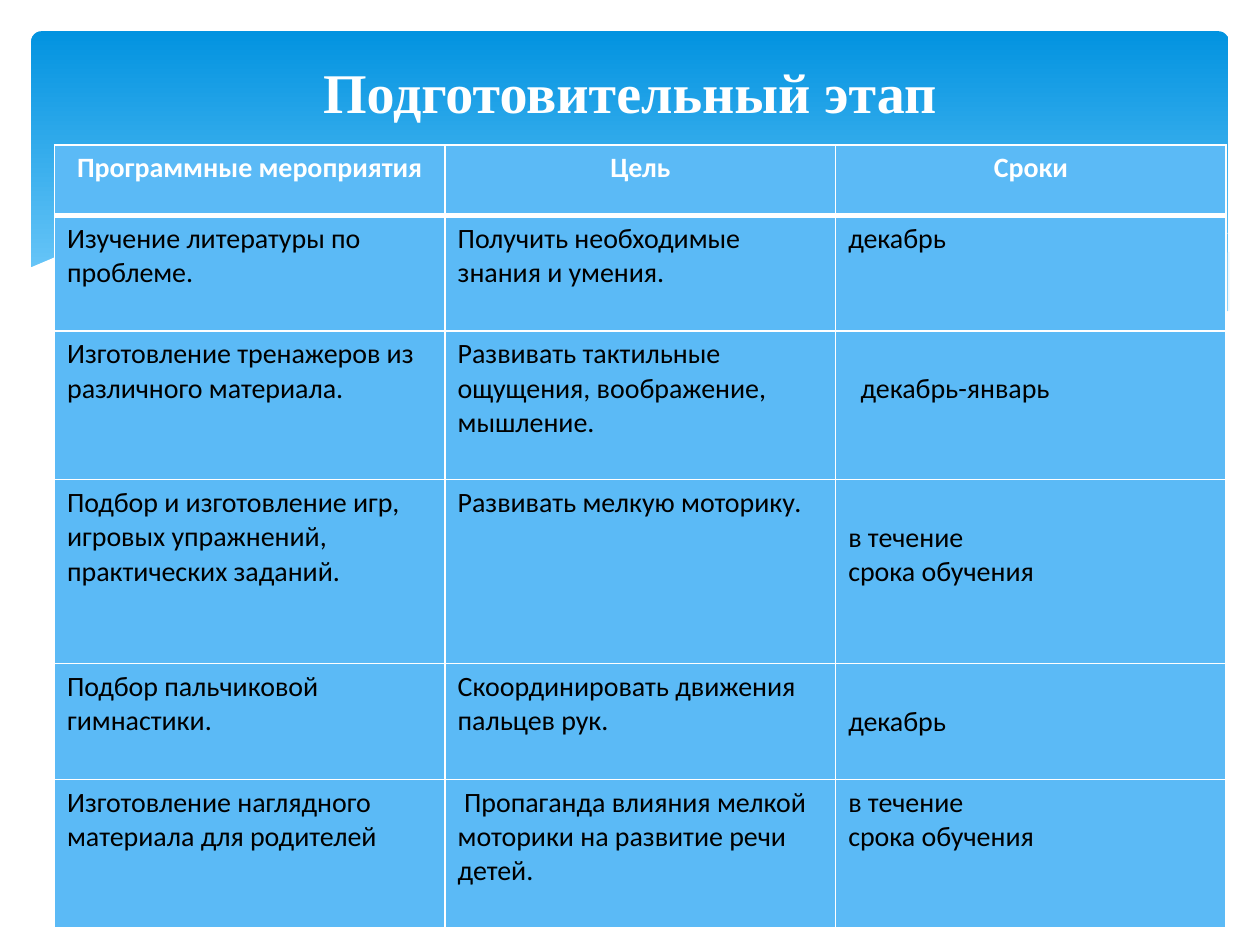
from lxml import etree
from pptx import Presentation
from pptx import util as u
from pptx.dml.color import RGBColor
from pptx.enum import shapes, text
from pptx.oxml.ns import qn

WHITE = RGBColor(0xFF, 0xFF, 0xFF)
BLACK = RGBColor(0, 0, 0)
DEEP_BLUE = RGBColor(0x02, 0x93, 0xE0)
LIGHT_BLUE = RGBColor(0x83, 0xD3, 0xFE)
PALE_BLUE = RGBColor(0xC6, 0xE7, 0xFC)
CELL_BLUE = RGBColor(0x5B, 0xBA, 0xF6)

RIGHT_WAVE = [(24.79, 5.08), (23.39, 5.33), (21.87, 5.66), (19.13, 6.3), (16.79, 6.73),
              (18.26, 6.91), (20.4, 7.06), (22.15, 6.96), (23.57, 6.68), (24.79, 6.27)]
LEFT_WAVE = [(22.68, 6.93), (20.5, 6.6), (17.93, 6.1), (15.98, 5.64), (14.1, 5.21),
             (11.81, 4.85), (9.65, 4.7), (7.26, 4.85), (9.19, 5.16), (11.4, 5.64),
             (14.38, 6.3), (16.89, 6.76), (19.33, 7.04), (21.29, 7.06)]
LONG_CREST = [(7.85, 4.95), (9.83, 4.75), (11.91, 4.8), (14.12, 5), (16.89, 5.41),
              (19.3, 5.92), (23.04, 6.91)]
RIGHT_CREST = [(15.57, 6.53), (18.29, 5.82), (21.23, 5.18), (23.11, 4.88), (24.77, 4.7)]
WHITE_WAVE = [(0.58, 5.41), (1.17, 5.16), (1.93, 4.95), (3.02, 4.75), (4.9, 4.67),
              (7.42, 4.83), (9.27, 5.13), (11.35, 5.59), (13.44, 6.07), (15.9, 6.55),
              (17.98, 6.86), (20.14, 7.01), (21.92, 6.96), (23.37, 6.73), (24.82, 6.25),
              (24.82, 8.36), (0.58, 8.36)]

HEADERS = ["Программные мероприятия", "Цель", "Сроки"]
ROWS = [
    ["Изучение литературы по проблеме.", "Получить необходимые знания и умения.", "декабрь"],
    ["Изготовление тренажеров из различного материала.",
     "Развивать тактильные ощущения, воображение, мышление.", "декабрь-январь"],
    ["Подбор и изготовление игр, игровых упражнений, практических заданий.",
     "Развивать мелкую моторику.", "в течение\nсрока обучения"],
    ["Подбор пальчиковой гимнастики.", "Скоординировать движения пальцев рук.", "декабрь"],
    ["Изготовление наглядного материала для родителей",
     "Пропаганда влияния мелкой моторики на развитие речи детей.",
     "в течение\nсрока обучения"],
]
ROW_HEIGHTS = [1.42, 2.33, 3, 3.71, 2.33, 3]
LOWERED_CELLS = {(2, 2), (3, 2), (4, 2)}
FIRST_LINE_INDENTS = {(2, 2): 0.25, (5, 1): 0.13}


def apply_format(target, values):
    """Set each attribute of the target from a dict of values."""
    for name, value in values.items():
        setattr(target, name, value)


def write_paragraphs(frame, content, color, alignment, font):
    """Fill a text frame and format its paragraphs and spans."""
    frame.text = content
    for para in frame.paragraphs:
        para.alignment = alignment
        for span in para.runs:
            apply_format(span.font, font)
            span.font.color.rgb = color


def add_wave(page, box, points, fill=None, opacity=100):
    """Draw a filled wave, or a thin open crest when no fill is given."""
    left, top = box[:2]
    spots = [(left + u.Cm(x), top + u.Cm(y)) for x, y in points]
    builder = page.shapes.build_freeform(*spots[0], scale=1.0)
    builder.add_line_segments(spots[1:], close=fill is not None)
    wave = builder.convert_to_shape()
    wave.shadow.inherit = False
    if fill is None:
        wave.fill.background()
        wave.line.color.rgb = WHITE
        wave.line.width = u.Pt(0.25)
        return
    wave.line.fill.background()
    wave.fill.solid()
    wave.fill.fore_color.rgb = fill
    if opacity < 100:
        color = wave.element.spPr.find(qn("a:solidFill"))[0]
        etree.SubElement(color, qn("a:alpha"), val=str(opacity * 1000))


def add_banner(page, box):
    """Draw the gradient panel with its waves inside the page box."""
    left, top, width, _ = box
    margin = u.Cm(0.63)
    panel = page.shapes.add_shape(shapes.MSO_SHAPE.ROUNDED_RECTANGLE, left + margin,
                                  top + margin, width - 2 * margin, u.Cm(6.86))
    panel.adjustments[0] = 0.03
    panel.shadow.inherit = False
    panel.line.fill.background()
    panel.fill.gradient()
    panel.fill.gradient_angle = 270
    stops = [(0, DEEP_BLUE), (0.9, LIGHT_BLUE)]
    for stop, (position, color) in zip(panel.fill.gradient_stops, stops):
        stop.position = position
        stop.color.rgb = color
    add_wave(page, box, RIGHT_WAVE, PALE_BLUE, 29)
    add_wave(page, box, LEFT_WAVE, PALE_BLUE, 40)
    add_wave(page, box, LONG_CREST)
    add_wave(page, box, RIGHT_CREST)
    add_wave(page, box, WHITE_WAVE, WHITE)


def place_title(page, box):
    """Move the title placeholder above the banner and format it."""
    title = page.shapes.title
    title.element.getparent().append(title.element)
    apply_format(title, dict(zip(("left", "top", "width", "height"), box)))
    title.text_frame.vertical_anchor = text.MSO_ANCHOR.MIDDLE
    write_paragraphs(title.text_frame, "Подготовительный этап", WHITE, text.PP_ALIGN.CENTER,
                     {"name": "Times New Roman", "size": u.Pt(32), "bold": True})


def set_borders(cell, widths):
    """Give a cell white borders, from a dict of side and width in points."""
    properties = cell._tc.get_or_add_tcPr()
    for index, (side, width) in enumerate(widths.items()):
        line = etree.Element(qn(f"a:ln{side}"), w=str(u.Pt(width)))
        fill = etree.SubElement(line, qn("a:solidFill"))
        etree.SubElement(fill, qn("a:srgbClr"), val=str(WHITE))
        properties.insert(index, line)


def add_plan_table(page, box):
    """Build the table of activities, goals and dates in the box."""
    content = [HEADERS] + ROWS
    table = page.shapes.add_table(len(content), len(HEADERS), *box).table
    for column in table.columns:
        column.width = box[2] // len(HEADERS)
    for row_index, (row, height) in enumerate(zip(table.rows, ROW_HEIGHTS)):
        row.height = u.Cm(height)
        header = row_index == 0
        for column_index, cell in enumerate(row.cells):
            place = (row_index, column_index)
            write_paragraphs(cell.text_frame, content[row_index][column_index],
                             WHITE if header else BLACK,
                             text.PP_ALIGN.CENTER if header else text.PP_ALIGN.LEFT,
                             {"name": "Calibri", "size": u.Pt(16), "bold": header})
            cell.fill.solid()
            cell.fill.fore_color.rgb = CELL_BLUE
            set_borders(cell, {"L": 1, "R": 1, "T": 3 if row_index == 1 else 1,
                               "B": 3 if header else 1})
            if place in LOWERED_CELLS:
                cell.margin_top = u.Cm(0.82)
            if place in FIRST_LINE_INDENTS:
                properties = cell.text_frame.paragraphs[0]._p.get_or_add_pPr()
                properties.set("indent", str(u.Cm(FIRST_LINE_INDENTS[place])))


def main():
    """Build the deck and save it."""
    deck = Presentation()
    apply_format(deck, {"slide_width": u.Cm(25.4), "slide_height": u.Cm(19.05)})
    page = deck.slides.add_slide(deck.slide_layouts[5])
    add_banner(page, (0, 0, deck.slide_width, deck.slide_height))
    place_title(page, (u.Cm(1.27), u.Cm(0.94), u.Cm(22.86), u.Cm(1.78)))
    add_plan_table(page, (u.Cm(1.1), u.Cm(2.92), u.Cm(23.62), u.Cm(sum(ROW_HEIGHTS))))
    deck.save("out.pptx")


if __name__ == "__main__":
    main()
